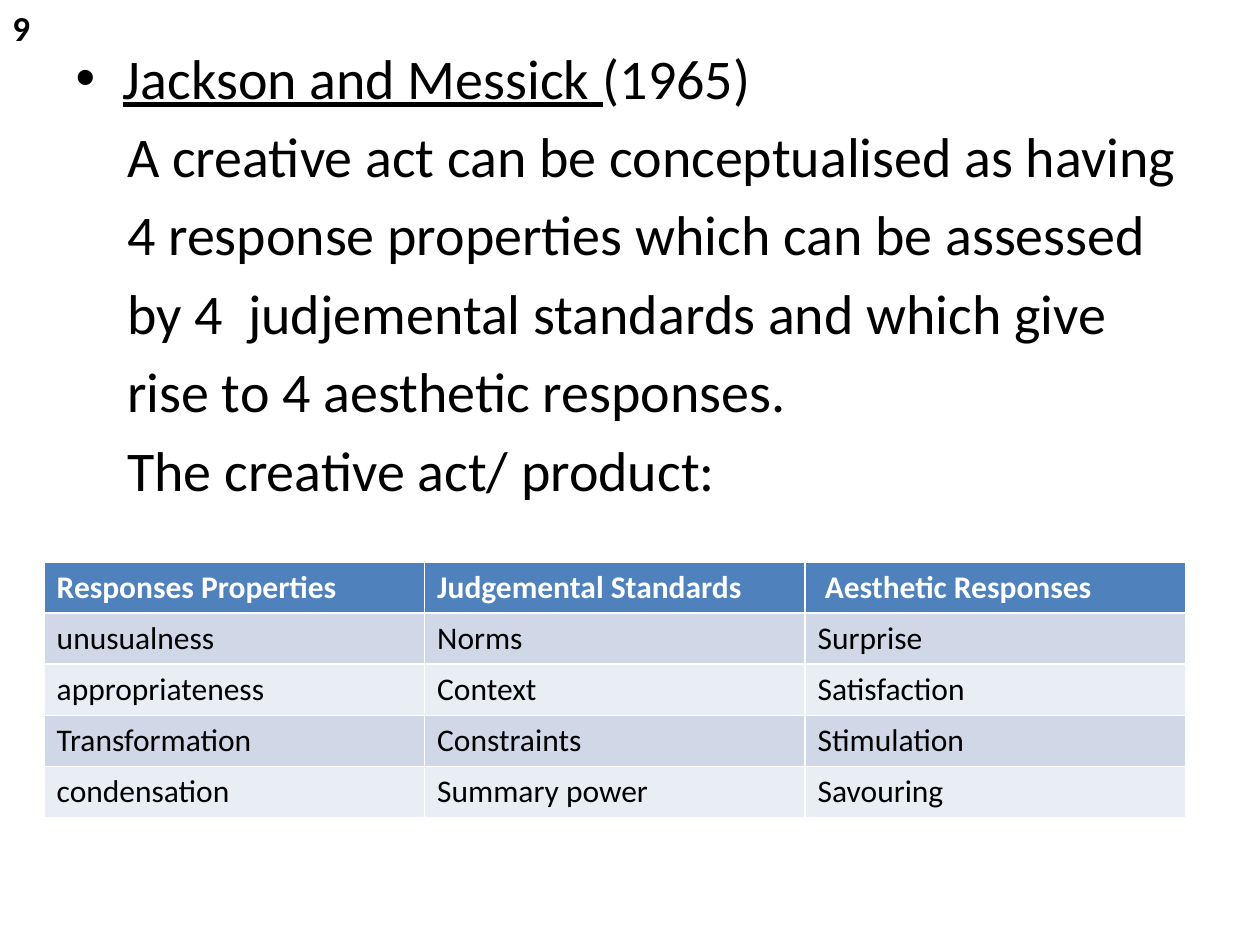
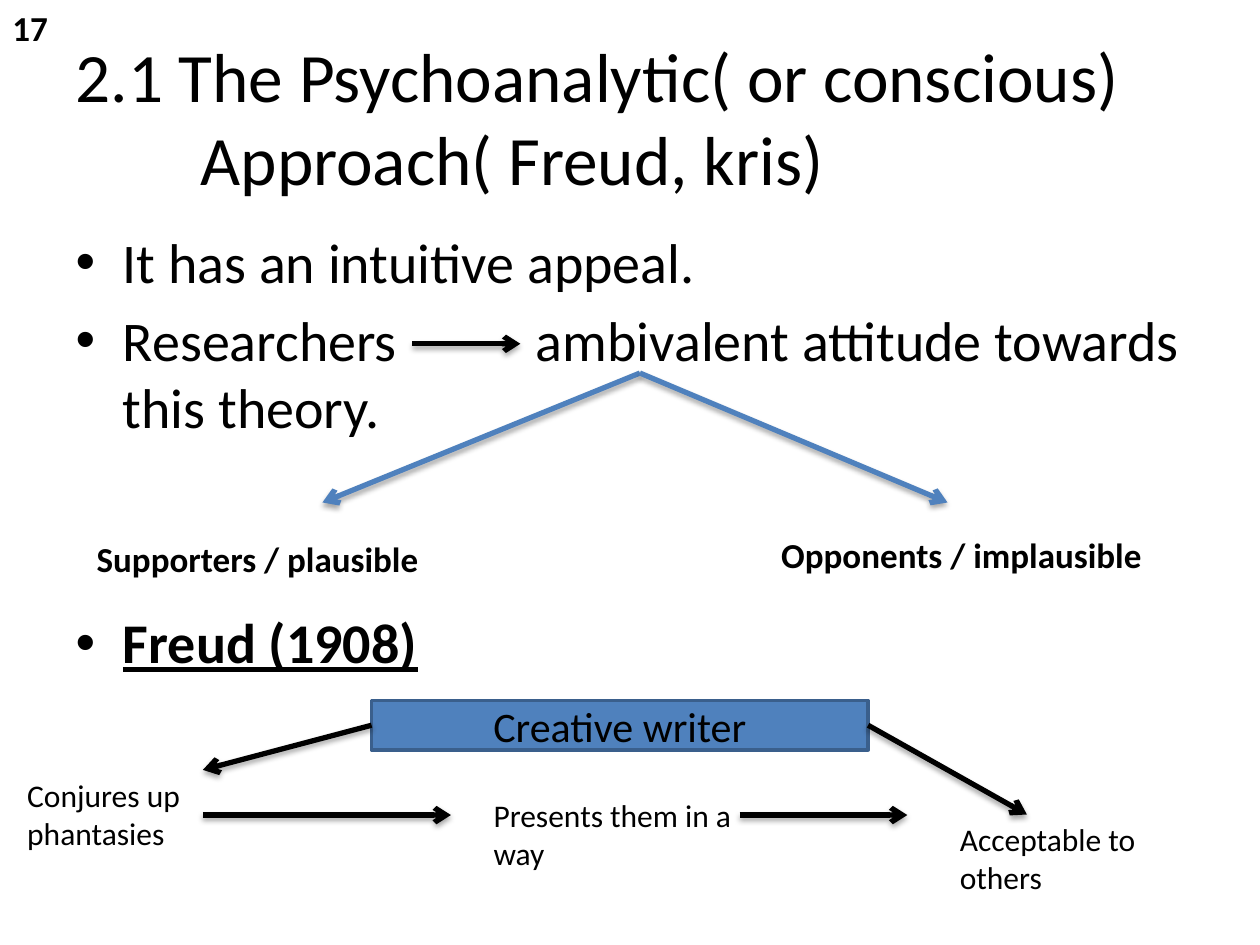
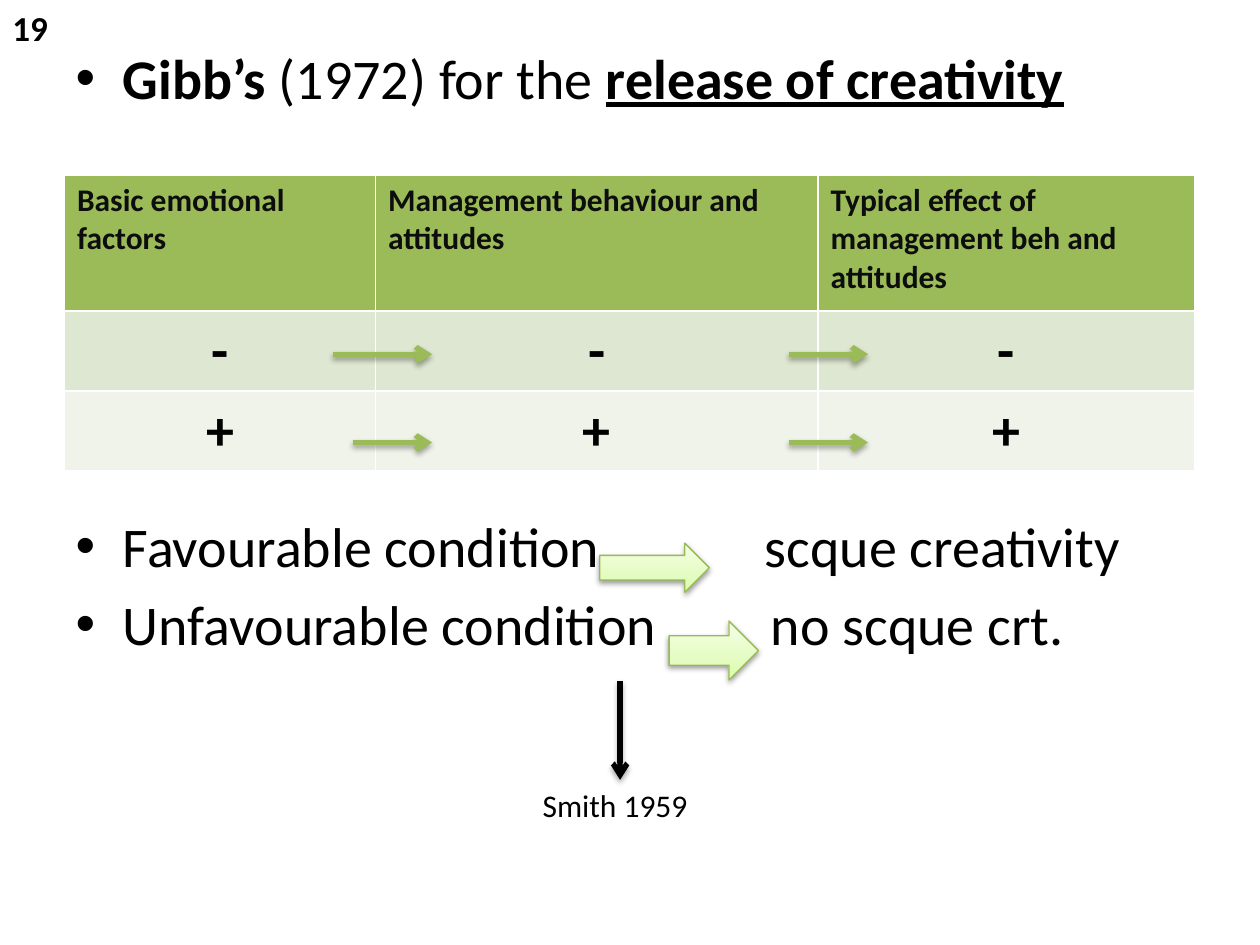
from lxml import etree
from pptx import Presentation
from pptx.dml.color import RGBColor
from pptx.enum.shapes import MSO_CONNECTOR, MSO_SHAPE
from pptx.enum.text import MSO_ANCHOR, MSO_AUTO_SIZE, PP_ALIGN
from pptx.oxml.ns import qn
from pptx.util import Cm, Pt

LINE = MSO_CONNECTOR.STRAIGHT
RECT, ARROW = MSO_SHAPE.RECTANGLE, MSO_SHAPE.RIGHT_ARROW
LEFT, CENTER = PP_ALIGN.LEFT, PP_ALIGN.CENTER
MIDDLE, FIXED = MSO_ANCHOR.MIDDLE, MSO_AUTO_SIZE.NONE

FONT = "Calibri"
BLACK, WHITE, INK = "000000", "FFFFFF", "0D0D0D"
BLUE, EDGE, GREEN, RIM = "4F81BD", "3A5F8C", "9BBB59", "98B955"
BLUES = (BLUE, "D0D8E8", "E9EDF4")
GREENS = (GREEN, "DEE7D1", "EFF3EA")
FADE = ((0, "DAFDA7"), (35, "E4FCC2"), (100, "F5FFE7"))
BOLD = {"bold": True}
UNDER = {"underline": True}
BODY = (1.27, 0.74, 22.86, 16.28)


# Shared helpers
def rgb(code):
    return RGBColor.from_string(code)


def place(part, box):
    for name, value in zip(("left", "top", "width", "height"), box):
        setattr(part, name, Cm(value))


def add_run(para, text, size, color=BLACK, gap=0, **style):
    run = para.add_run()
    run.text = text
    for name, value in {"name": FONT, "size": Pt(size), **style}.items():
        setattr(run.font, name, value)
    run.font.color.rgb = rgb(color)
    if gap:
        run.font._element.set("spc", str(gap * 100))


def sub(parent, tag, **attrs):
    return etree.SubElement(parent, qn(tag), attrs)


def add_shadow(effects, alpha, dist):
    outer = sub(effects, "a:outerShdw", blurRad="40000", dist=str(dist),
                dir="5400000", rotWithShape="0")
    color = sub(outer, "a:srgbClr", val=BLACK)
    sub(color, "a:alpha", val=str(alpha * 1000))


def add_label(slide, text, box, size=18, wrap=True, **style):
    frame = slide.shapes.add_textbox(*map(Cm, box)).text_frame
    frame.word_wrap = wrap
    add_run(frame.paragraphs[0], text, size, **style)


def add_arrow(slide, start, end, color=BLACK):
    line = slide.shapes.add_connector(LINE, *map(Cm, start + end))
    line.line.color.rgb = rgb(color)
    line.line.width = Pt(3)
    props = line._element.spPr
    sub(props.find(qn("a:ln")), "a:tailEnd", type="arrow")
    add_shadow(sub(props, "a:effectLst"), 35, 23000)


def add_slide(deck, number, titled=False):
    slide = deck.slides.add_slide(deck.slide_layouts[1])
    if not titled:
        title = slide.shapes.title._element
        title.getparent().remove(title)
    add_label(slide, number, (0, 0, 1.3, 1.12), 20, False, **BOLD)
    return slide


def next_para(frame, index):
    return frame.add_paragraph() if index else frame.paragraphs[0]


def fill_title(slide, lines, box):
    title = slide.shapes.title
    place(title, box)
    frame = title.text_frame
    frame.auto_size, frame.vertical_anchor = FIXED, MIDDLE
    for i, (text, inset) in enumerate(lines):
        para = next_para(frame, i)
        para.alignment = LEFT
        para._p.get_or_add_pPr().set("marL", str(Cm(inset)))
        add_run(para, text, 39.6)


def fill_body(slide, items, box):
    """Each item is (runs, space before in points or None, bulleted)."""
    body = slide.placeholders[1]
    place(body, box)
    frame = body.text_frame
    frame.auto_size = FIXED
    for i, (runs, before, bullet) in enumerate(items):
        para = next_para(frame, i)
        if before:
            para.space_before = Pt(before)
        if not bullet:
            props = para._p.get_or_add_pPr()
            props.set("marL", str(Cm(1.04)))
            props.set("indent", "0")
            sub(props, "a:buNone")
        for text, style in runs:
            add_run(para, text, 32, **style)


def add_grid(slide, rows, box, widths, heights, fills, head, body):
    """head and body hold the text format of the first and other rows."""
    grid = slide.shapes.add_table(len(rows), len(widths), *map(Cm, box)).table
    for col, width in zip(grid.columns, widths):
        col.width = Cm(width)
    for r, texts in enumerate(rows):
        grid.rows[r].height = Cm(heights[r])
        shade = fills[0] if r == 0 else fills[2 - r % 2]
        style = dict(body if r else head)
        align = style.pop("align", LEFT)
        for c, text in enumerate(texts):
            cell = grid.cell(r, c)
            cell.fill.solid()
            cell.fill.fore_color.rgb = rgb(shade)
            para = cell.text_frame.paragraphs[0]
            para.alignment = align
            add_run(para, text, **style)


# Slide 9: response properties
def act_slide(deck):
    slide = add_slide(deck, "9")
    lines = (
        "A creative act can be conceptualised as having",
        "4 response properties which can be assessed",
        "by 4  judjemental standards and which give",
        "rise to 4 aesthetic responses.",
        "The creative act/ product:",
    )
    lead = [("Jackson and Messick ", UNDER), ("(1965)", {})]
    items = [(lead, None, True)]
    items += [([(line, {})], None, False) for line in lines]
    fill_body(slide, items, BODY)
    rows = (
        ("Responses Properties", "Judgemental Standards", " Aesthetic Responses"),
        ("unusualness", "Norms", "Surprise"),
        ("appropriateness", "Context", "Satisfaction"),
        ("Transformation", "Constraints", "Stimulation"),
        ("condensation", "Summary power", "Savouring"),
    )
    add_grid(slide, rows, (0.89, 11.33, 23.01, 5.15), [7.67] * 3, [1.03] * 5,
             BLUES, {"size": 18, "color": WHITE, **BOLD},
             {"size": 18, "bold": False})


# Slide 17: the two camps and the writer
def add_fork(slide, box):
    x, y, w, h = box
    for end in (x, x + w):
        add_arrow(slide, (x + 6.4, y), (end, y + h), BLUE)
    add_label(slide, "Supporters / plausible", (x - 4.8, y + 3.2, 7.7, 1.12),
              20, **BOLD)
    add_label(slide, "Opponents / implausible", (x + 9, y + 3.12, 8, 1.12),
              20, **BOLD)


def add_writer(slide, box):
    x, y = box[:2]
    bar = slide.shapes.add_shape(RECT, *map(Cm, (x + 7.19, y, 10.01, 1)))
    bar.shadow.inherit = False
    bar.fill.solid()
    bar.fill.fore_color.rgb = rgb(BLUE)
    bar.line.color.rgb = rgb(EDGE)
    bar.line.width = Pt(2)
    frame = bar.text_frame
    frame.vertical_anchor = MIDDLE
    para = frame.paragraphs[0]
    para.alignment = CENTER
    add_run(para, "Creative writer", 24)
    for x1, y1, x2, y2 in (
        (7.19, 0.5, 3.79, 1.4),
        (3.79, 2.31, 8.79, 2.31),
        (14.61, 2.31, 17.99, 2.31),
        (17.2, 0.5, 20.4, 2.3),
    ):
        add_arrow(slide, (x + x1, y + y1), (x + x2, y + y2))
    for text, dx, dy, w in (
        ("Conjures up phantasies", 0, 1.4, 6.2),
        ("Presents them in a way", 9.4, 1.8, 5.8),
        ("Acceptable to others", 18.8, 2.29, 5.6),
    ):
        # The first label wraps within a narrower column
        add_label(slide, text, (x + dx, y + dy, min(w, 4.8) if not dx else w, 1.8))


def freud_slide(deck):
    slide = add_slide(deck, "17", True)
    fill_title(slide, (("2.1 The Psychoanalytic( or conscious)", 0),
                       ("Approach( Freud, kris)", 2.52)),
               (1.27, 0.76, 22.86, 3.18))
    view = [("Researchers", {}), (" ", {"gap": 72}),
            ("ambivalent attitude towards this theory.", {})]
    fill_body(slide, (
        ([("It has an intuitive appeal.", {})], None, True),
        (view, None, True),
        ([("Freud (1908)", {**BOLD, **UNDER})], 96, True),
    ), (1.27, 4.45, 22.86, 12.57))
    add_arrow(slide, (8.31, 6.93), (10.49, 6.93))
    add_fork(slide, (6.5, 7.52, 12.6, 2.61))
    add_writer(slide, (0.3, 14.12, 24.4, 4.1))


# Slide 19: release of creativity
def add_signs(slide, box):
    x, y = box[:2]
    rows = (
        ("Basic emotional factors", "Management behaviour and attitudes",
         "Typical effect of management beh and attitudes"),
        ("-",) * 3,
        ("+",) * 3,
    )
    add_grid(slide, rows, box, (6.27, 8.92, 7.59), (2.74, 1.6, 1.6), GREENS,
             {"size": 18, "color": INK, **BOLD},
             {"size": 32, "align": CENTER, **BOLD})
    for dy, first in ((3.61, 5.41), (5.39, 5.81)):
        for start, end in ((first, 7.41), (14.6, 16.2)):
            add_arrow(slide, (x + start, y + dy), (x + end, y + dy), GREEN)


def add_block(slide, box):
    block = slide.shapes.add_shape(ARROW, *map(Cm, box))
    block.fill.gradient()
    block.fill.gradient_angle = 90
    props = block._element.spPr
    stops = props.find(".//" + qn("a:gsLst"))
    for stop in list(stops):
        stops.remove(stop)
    for pos, color in FADE:
        stop = sub(stops, "a:gs", pos=str(pos * 1000))
        sub(stop, "a:srgbClr", val=color)
    block.line.color.rgb = rgb(RIM)
    block.line.width = Pt(0.75)
    block.shadow.inherit = False
    add_shadow(props.find(qn("a:effectLst")), 38, 20000)


def gibb_slide(deck):
    slide = add_slide(deck, "19")
    fill_body(slide, (
        ([("Gibb’s", BOLD), (" (1972) for the ", {}),
          ("release of creativity", {**BOLD, **UNDER})], None, True),
        ([("Favourable condition", {}), (" ", {"gap": 87}),
          ("scque creativity", {})], 229, True),
        ([("Unfavourable condition", {}), (" ", {"gap": 58}),
          ("no scque crt.", {})], None, True),
    ), BODY)
    add_signs(slide, (1.3, 3.53, 22.78, 5.94))
    for box in ((12.09, 10.95, 2.21, 0.99), (13.49, 12.52, 1.8, 1.19)):
        add_block(slide, box)
    add_arrow(slide, (12.5, 13.72), (12.5, 15.72))
    add_label(slide, "Smith 1959", (10.69, 15.72, 5.59, 1.02))


def main():
    deck = Presentation()
    deck.slide_width, deck.slide_height = Cm(25.4), Cm(19.05)
    for build in (act_slide, freud_slide, gibb_slide):
        build(deck)
    deck.save("out.pptx")


if __name__ == "__main__":
    main()
